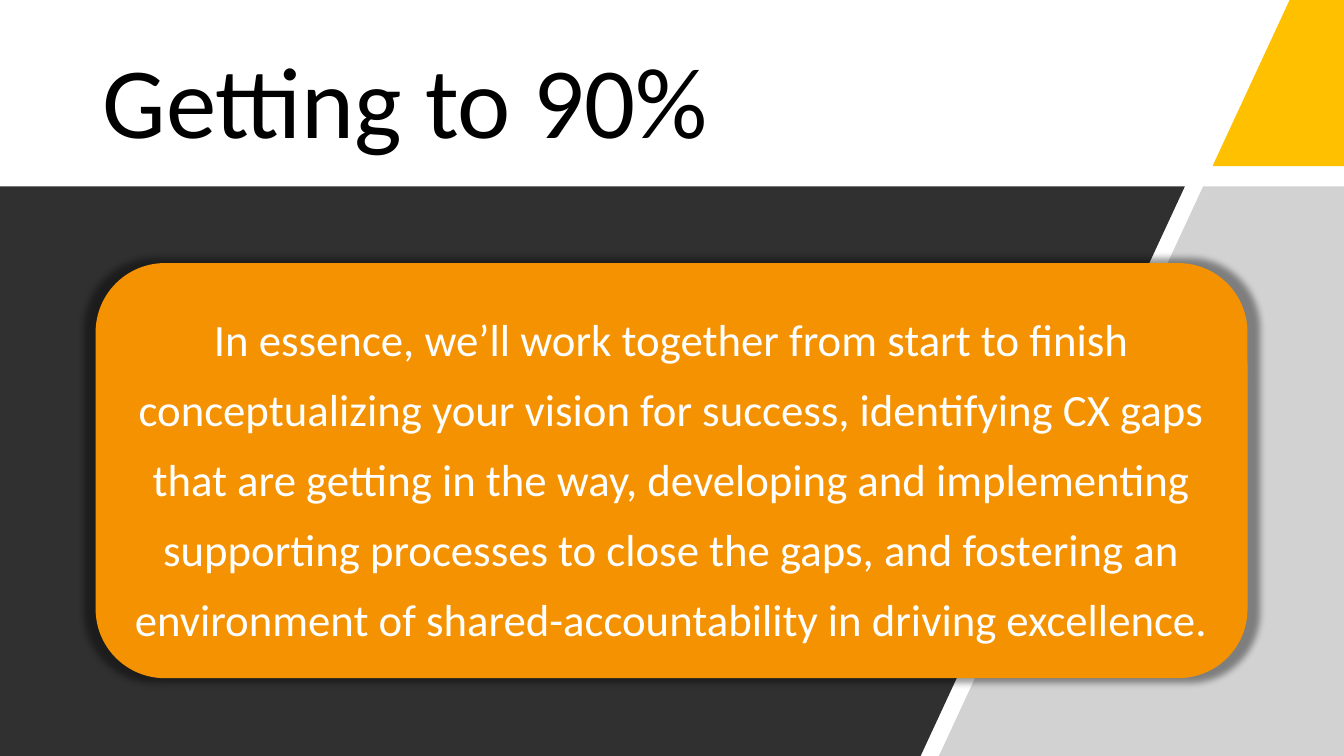
from lxml import etree
from pptx import Presentation
from pptx.dml.color import RGBColor
from pptx.enum.shapes import MSO_SHAPE
from pptx.enum.text import MSO_ANCHOR, PP_ALIGN
from pptx.oxml import parse_xml
from pptx.oxml.ns import nsdecls, qn
from pptx.util import Cm, Pt

ROUNDED = MSO_SHAPE.ROUNDED_RECTANGLE
MIDDLE = MSO_ANCHOR.MIDDLE
LEFT, CENTER = PP_ALIGN.LEFT, PP_ALIGN.CENTER

TITLE = "Getting to 90%"
MESSAGE = (
    "In essence, we’ll work together from start to finish conceptualizing "
    "your vision for success, identifying CX gaps that are getting in the way, "
    "developing and implementing supporting processes to close the gaps, and "
    "fostering an environment of shared-accountability in driving excellence."
)

THEME = {
    "font": "Calibri", "title_size": 72, "message_size": 32,
    "black": "000000", "white": "FFFFFF", "yellow": "FFC000",
    "gray": "A6A6A6", "dark": "303030", "orange": "F49202",
}

WIDTH, HEIGHT = 33.87, 19.05
HEADER_BOTTOM, BODY_TOP = 4.19, 4.7
SLANT_START, SLANT_RATE, SLANT_GAP = 32.5, 0.464, 0.46
TITLE_BOX = (2.34, 1.02, 27.53, 3.3)
CARD_BOX = (2.41, 6.63, 29.03, 10.46)


def slant(y):
    return SLANT_START - SLANT_RATE * y


PANELS = [
    ("yellow", None, [(slant(0), 0), (WIDTH, 0),
                      (WIDTH, HEADER_BOTTOM), (slant(HEADER_BOTTOM), HEADER_BOTTOM)]),
    ("gray", 50, [(slant(BODY_TOP), BODY_TOP), (WIDTH, BODY_TOP),
                  (WIDTH, HEIGHT), (slant(HEIGHT), HEIGHT)]),
    ("dark", None, [(0, BODY_TOP), (slant(BODY_TOP) - SLANT_GAP, BODY_TOP),
                    (slant(HEIGHT) - SLANT_GAP, HEIGHT), (0, HEIGHT)]),
]


def paint(shape, color, opacity=None):
    shape.shadow.inherit = False
    shape.fill.solid()
    shape.fill.fore_color.rgb = RGBColor.from_string(THEME[color])
    shape.line.fill.background()
    if opacity is not None:
        color_element = shape.fill._xPr.find(".//" + qn("a:srgbClr"))
        etree.SubElement(color_element, qn("a:alpha"), val=str(opacity * 1000))


def add_panel(slide, color, opacity, points):
    corners = [(Cm(x), Cm(y)) for x, y in points]
    builder = slide.shapes.build_freeform(*corners[0])
    builder.add_line_segments(corners[1:], close=True)
    paint(builder.convert_to_shape(), color, opacity)


def add_glow_shadow(shape):
    effects = shape._element.spPr.find(qn("a:effectLst"))
    effects.append(parse_xml(
        f'<a:outerShdw {nsdecls("a")} blurRad="63500" sx="102000" sy="102000" '
        'algn="ctr" rotWithShape="0"><a:srgbClr val="000000">'
        '<a:alpha val="40000"/></a:srgbClr></a:outerShdw>'))


def write(shape, text, *, size, color, align, spacing):
    frame = shape.text_frame
    frame.word_wrap = True
    frame.vertical_anchor = MIDDLE
    paragraph = frame.paragraphs[0]
    paragraph.alignment = align
    paragraph.line_spacing = spacing
    run = paragraph.add_run()
    run.text = text
    run.font.name = THEME["font"]
    run.font.size = Pt(THEME[size])
    run.font.color.rgb = RGBColor.from_string(THEME[color])


def main():
    presentation = Presentation()
    presentation.slide_width, presentation.slide_height = Cm(WIDTH), Cm(HEIGHT)
    slide = presentation.slides.add_slide(presentation.slide_layouts[6])

    title = slide.shapes.add_textbox(*map(Cm, TITLE_BOX))
    write(title, TITLE, size="title_size", color="black", align=LEFT, spacing=0.9)

    for color, opacity, points in PANELS:
        add_panel(slide, color, opacity, points)

    card = slide.shapes.add_shape(ROUNDED, *map(Cm, CARD_BOX))
    paint(card, "orange")
    add_glow_shadow(card)
    write(card, MESSAGE, size="message_size", color="white", align=CENTER, spacing=1.3)

    presentation.save("out.pptx")


if __name__ == "__main__":
    main()
